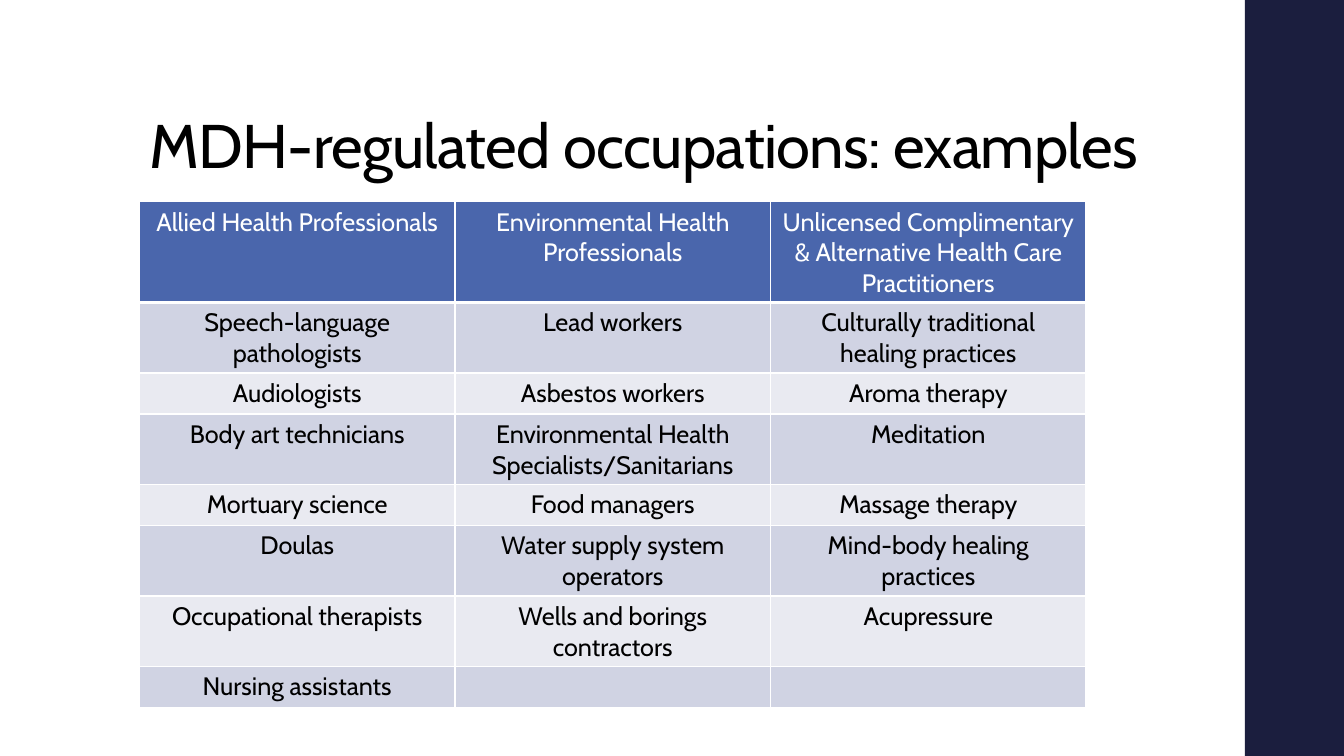
"""Build the slide on regulated occupations."""
from typing import NamedTuple

from lxml.etree import SubElement
from pptx import Presentation
from pptx.dml.color import RGBColor
from pptx.enum.shapes import MSO_SHAPE
from pptx.enum.text import MSO_ANCHOR, PP_ALIGN
from pptx.oxml.ns import qn
from pptx.util import Pt

FONT = "Cabin"
HUES = {
    "navy": "1B1E3E",
    "head": "4A66AC",
    "odd": "D0D3E3",
    "even": "E9EAF1",
    "white": "FFFFFF",
    "black": "000000",
}


class Row(NamedTuple):
    cells: tuple[str, str, str]
    fill: str
    ink: str = "black"
    top: float = 1
    base: float = 1


HEAD = Row(
    ("Allied Health Professionals", "Environmental Health Professionals",
     "Unlicensed Complimentary & Alternative Health Care Practitioners"),
    "head", "white", base=3,
)
JOBS = (
    ("Speech-language pathologists", "Lead workers",
     "Culturally traditional healing practices"),
    ("Audiologists", "Asbestos workers", "Aroma therapy"),
    ("Body art technicians", "Environmental Health Specialists/Sanitarians",
     "Meditation"),
    ("Mortuary science", "Food managers", "Massage therapy"),
    ("Doulas", "Water supply system operators", "Mind-body healing practices"),
    ("Occupational therapists", "Wells and borings contractors", "Acupressure"),
    ("Nursing assistants", "", ""),
)
ROWS = [HEAD] + [
    Row(jobs, "even" if i % 2 else "odd", top=1 if i else 3)
    for i, jobs in enumerate(JOBS)
]


def tint(name: str) -> RGBColor:
    return RGBColor.from_string(HUES[name])


def write(par, text: str, size: float, ink: str):
    run = par.add_run()
    run.text = text
    run.font.name = FONT
    run.font.size = Pt(size)
    run.font.color.rgb = tint(ink)
    return run


def edge(cell, row: Row) -> None:
    props = cell._tc.get_or_add_tcPr()
    sides = (("lnL", 1), ("lnR", 1), ("lnT", row.top), ("lnB", row.base))
    for i, (side, width) in enumerate(sides):
        line = SubElement(props, qn(f"a:{side}"), w=str(Pt(width)))
        fill = SubElement(line, qn("a:solidFill"))
        SubElement(fill, qn("a:srgbClr"), val=HUES["white"])
        props.insert(i, line)


def draw_bar(slide) -> None:
    bar = slide.shapes.add_shape(
        MSO_SHAPE.RECTANGLE, Pt(889.2), Pt(0), Pt(70.8), Pt(540))
    bar.shadow.inherit = False
    bar.fill.solid()
    bar.fill.fore_color.rgb = tint("navy")
    bar.line.fill.background()


def draw_title(slide) -> None:
    box = slide.shapes.add_textbox(Pt(99.6), Pt(28.8), Pt(763.2), Pt(104.4))
    frame = box.text_frame
    frame.word_wrap = True
    frame.vertical_anchor = MSO_ANCHOR.BOTTOM
    par = frame.paragraphs[0]
    par.line_spacing = 0.9
    run = write(par, "MDH-regulated occupations: examples", 44, "black")
    run.font._element.set("spc", "-50")


def draw_table(slide) -> None:
    high, wide = 29.2, 225.4
    count = len(HEAD.cells)
    table = slide.shapes.add_table(
        len(ROWS), count, Pt(99.6), Pt(144),
        Pt(wide * count), Pt(high * len(ROWS))).table
    for col in table.columns:
        col.width = Pt(wide)
    for row, line in zip(ROWS, table.rows):
        line.height = Pt(high)
        for text, cell in zip(row.cells, line.cells):
            cell.fill.solid()
            cell.fill.fore_color.rgb = tint(row.fill)
            edge(cell, row)
            par = cell.text_frame.paragraphs[0]
            par.alignment = PP_ALIGN.CENTER
            if text:
                run = write(par, text, 18, row.ink)
                run.font.bold = False


def main() -> None:
    deck = Presentation()
    deck.slide_width, deck.slide_height = Pt(960), Pt(540)
    slide = deck.slides.add_slide(deck.slide_layouts[6])
    draw_bar(slide)
    draw_title(slide)
    draw_table(slide)
    deck.save("out.pptx")


if __name__ == "__main__":
    main()
